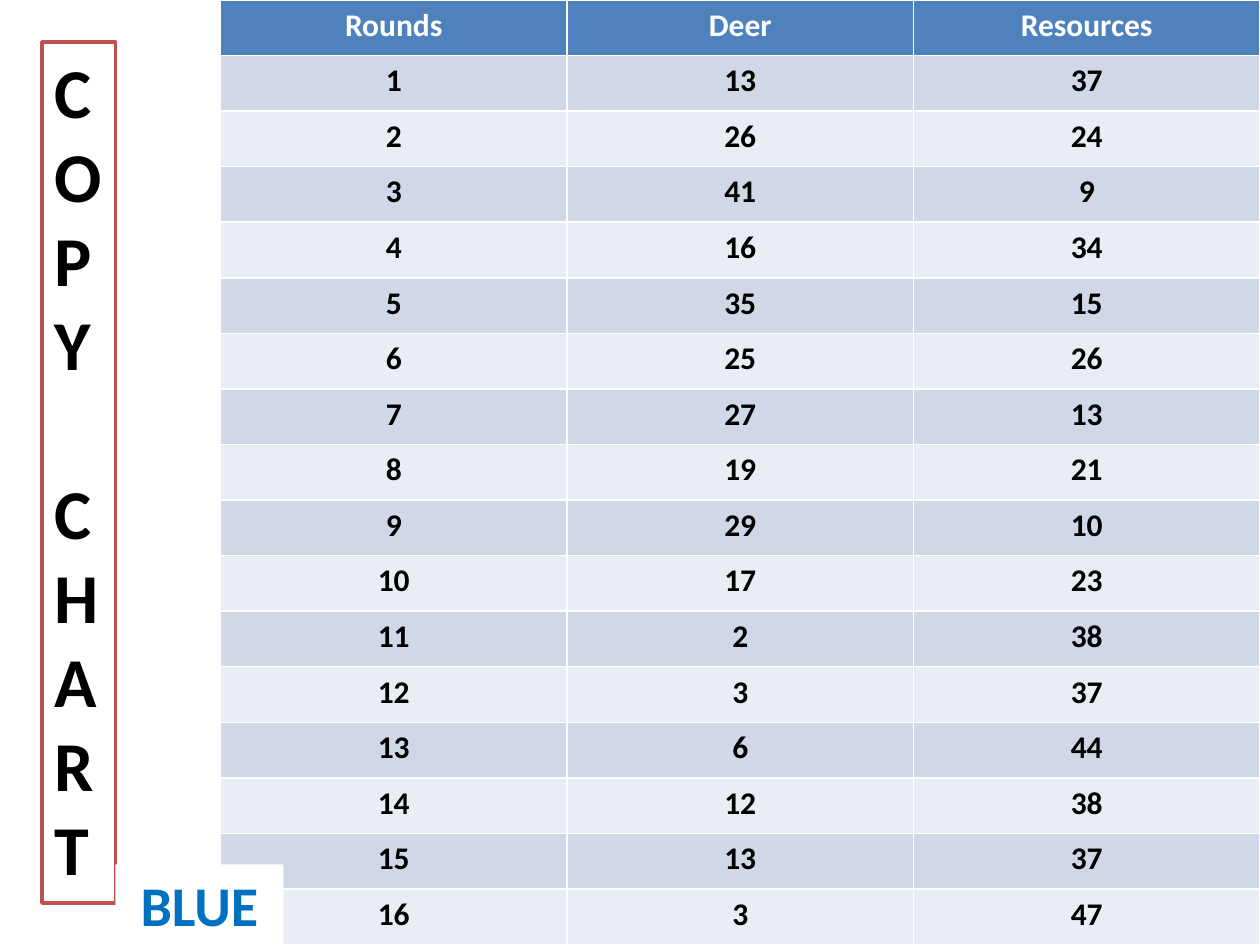
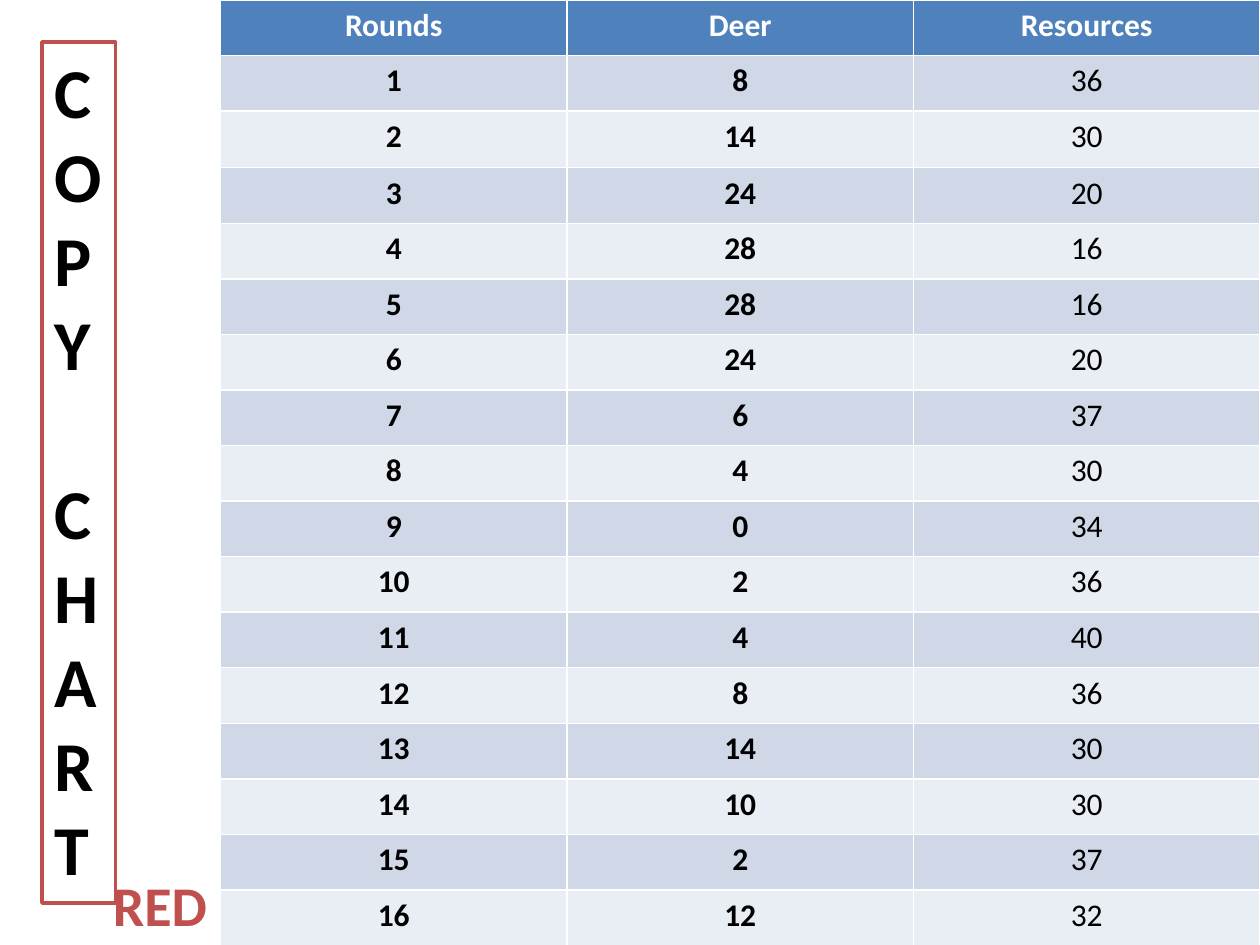
from dataclasses import dataclass

from pptx import Presentation
from pptx.dml.color import RGBColor
from pptx.enum.text import MSO_ANCHOR, MSO_AUTO_SIZE, PP_ALIGN
from pptx.util import Pt

CENTER, LEFT = PP_ALIGN.CENTER, PP_ALIGN.LEFT
TOP = MSO_ANCHOR.TOP
GROW = MSO_AUTO_SIZE.SHAPE_TO_FIT_TEXT


@dataclass(frozen=True)
class Theme:
    font: str = "Calibri"
    white: str = "FFFFFF"
    black: str = "000000"
    header: str = "4F81BD"
    bands: tuple = ("D0D8E8", "E9EDF4")
    red: str = "C0504D"
    blue: str = "0070C0"
    cell_size: float = 18
    tag_size: float = 32
    banner_size: float = 40
    banner_gap: float = 48.8


THEME = Theme()
BANNER = ("COPY", "CHART")
HEADERS = ("Rounds", "Deer", "Resources")
SLIDES = [
    {
        "deer": (13, 26, 41, 16, 35, 25, 27, 19, 29, 17, 2, 3, 6, 12, 13, 3),
        "resources": (37, 24, 9, 34, 15, 26, 13, 21, 10, 23, 38, 37, 44, 38, 37, 47),
        "bold_columns": (True, True, True),
        "row_extra": {},
        "tag": {"text": "BLUE", "color": THEME.blue, "fill": THEME.white,
                "box": (66, 494, 96, 46)},
    },
    {
        "deer": (8, 14, 24, 28, 28, 24, 6, 4, 0, 2, 4, 8, 14, 10, 2, 12),
        "resources": (36, 30, 20, 16, 16, 20, 37, 30, 34, 36, 40, 36, 30, 30, 37, 32),
        "bold_columns": (True, True, False),
        "row_extra": {2: 0.6},
        "tag": {"text": "RED", "color": THEME.red, "fill": None,
                "box": (54, 494, 75, 46)},
    },
]

SLIDE_W, SLIDE_H = 720, 540
TABLE_LEFT = 126
BANNER_BOX = (24, 24, 42, 492)


def rgb(value):
    return RGBColor.from_string(value)


def format_paragraph(p, size, color, bold=True, align=CENTER):
    p.alignment = align
    p.font.name = THEME.font
    p.font.size = Pt(size)
    p.font.bold = bold
    p.font.color.rgb = rgb(color)


def add_box(s, box, fill=None):
    sp = s.shapes.add_textbox(*map(Pt, box))
    if fill:
        sp.fill.solid()
        sp.fill.fore_color.rgb = rgb(fill)
    tf = sp.text_frame
    tf.auto_size = GROW
    tf.vertical_anchor = TOP
    tf.word_wrap = True
    return sp


def add_rounds_table(s, data):
    rounds = range(1, len(data["deer"]) + 1)
    rows = [HEADERS, *zip(rounds, data["deer"], data["resources"])]
    width = SLIDE_W - TABLE_LEFT
    table = s.shapes.add_table(len(rows), len(HEADERS), Pt(TABLE_LEFT), 0,
                               Pt(width), Pt(SLIDE_H)).table
    for column in table.columns:
        column.width = Pt(width / len(HEADERS))
    for i, values in enumerate(rows):
        table.rows[i].height = Pt(SLIDE_H / len(rows) + data["row_extra"].get(i, 0))
        fill = THEME.bands[(i - 1) % 2] if i else THEME.header
        color = THEME.black if i else THEME.white
        for j, value in enumerate(values):
            cell = table.cell(i, j)
            cell.fill.solid()
            cell.fill.fore_color.rgb = rgb(fill)
            cell.text = str(value)
            bold = i == 0 or data["bold_columns"][j]
            format_paragraph(cell.text_frame.paragraphs[0], THEME.cell_size, color, bold)


def add_banner(s):
    sp = add_box(s, BANNER_BOX, THEME.white)
    sp.line.color.rgb = rgb(THEME.red)
    sp.line.width = Pt(2)
    tf = sp.text_frame
    tf.word_wrap = False
    tf.text = "\n".join("".join(BANNER))
    for p in tf.paragraphs:
        format_paragraph(p, THEME.banner_size, THEME.black, align=LEFT)
    tf.paragraphs[len(BANNER[0])].space_before = Pt(THEME.banner_gap)


def add_tag(s, tag):
    tf = add_box(s, tag["box"], tag["fill"]).text_frame
    tf.text = tag["text"]
    format_paragraph(tf.paragraphs[0], THEME.tag_size, tag["color"])


def main():
    prs = Presentation()
    prs.slide_width, prs.slide_height = Pt(SLIDE_W), Pt(SLIDE_H)
    blank = prs.slide_layouts[6]
    for data in SLIDES:
        s = prs.slides.add_slide(blank)
        add_rounds_table(s, data)
        add_banner(s)
        add_tag(s, data["tag"])
    prs.save("out.pptx")


if __name__ == "__main__":
    main()
